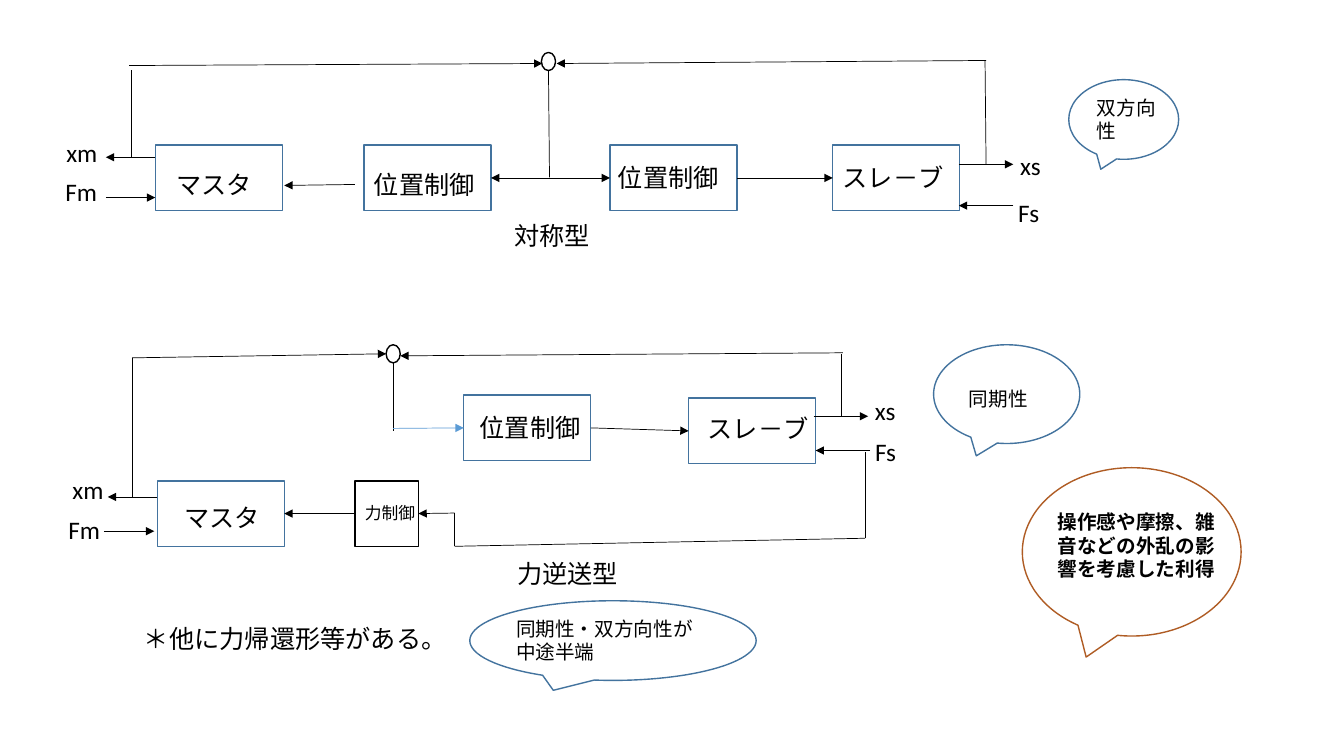
from lxml.etree import SubElement
from pptx import Presentation
from pptx.dml.color import RGBColor
from pptx.enum.shapes import MSO_CONNECTOR, MSO_SHAPE
from pptx.enum.text import MSO_AUTO_SIZE
from pptx.oxml.ns import qn
from pptx.util import Inches, Pt

THEME = {
    "font": "Calibri",
    "black": RGBColor(0x00, 0x00, 0x00),
    "white": RGBColor(0xFF, 0xFF, 0xFF),
    "blue": RGBColor(0x43, 0x73, 0x9E),
    "light blue": RGBColor(0x5B, 0x9B, 0xD5),
    "orange": RGBColor(0xAF, 0x5C, 0x24),
    "label": 18,
    "callout": 14,
    "small": 12,
    "outline": 1,
    "wire": 0.5,
}
TOP, LEFT, BOTTOM, RIGHT = range(4)
BOX_WIDTH, BOX_HEIGHT = 1.26, 0.65
NODE_WIDTH, NODE_HEIGHT = 0.14, 0.18
LINE_HEIGHT = {"label": 0.4, "callout": 0.34, "small": 0.3}

# name: left, top, width, outline colour
BLOCKS = {
    "symmetric master": (1.54, 1.44, BOX_WIDTH, "blue"),
    "master position control": (3.61, 1.44, BOX_WIDTH, "blue"),
    "slave position control": (6.05, 1.44, BOX_WIDTH, "blue"),
    "symmetric slave": (8.26, 1.44, BOX_WIDTH, "blue"),
    "reflecting master": (1.56, 4.77, BOX_WIDTH, "blue"),
    "force control": (3.52, 4.77, 0.63, "black"),
    "position control": (4.6, 3.92, BOX_WIDTH, "blue"),
    "reflecting slave": (6.83, 3.95, BOX_WIDTH, "blue"),
}

# left, top of each summing point
SUMMING_POINTS = [(5.37, 0.52), (3.83, 3.42)]

# text, left, top, width, size
LABELS = [
    ("マスタ", 1.65, 1.63, 0.99, "label"),
    ("位置制御", 3.61, 1.63, 1.26, "label"),
    ("位置制御", 6.03, 1.56, 1.26, "label"),
    ("スレ－ブ", 8.26, 1.56, 1.51, "label"),
    ("xm", 0.56, 1.31, 0.56, "label"),
    ("Fm", 0.55, 1.7, 0.76, "label"),
    ("xs", 10.02, 1.44, 0.53, "label"),
    ("Fs", 10, 1.91, 0.68, "label"),
    ("対称型", 5, 2.14, 3.32, "label"),
    ("マスタ", 1.73, 4.93, 0.99, "label"),
    ("力制御", 3.52, 4.94, 0.99, "small"),
    ("位置制御", 4.66, 4.04, 1.26, "label"),
    ("スレ－ブ", 6.92, 4.05, 1.51, "label"),
    ("xm", 0.62, 4.66, 0.56, "label"),
    ("Fm", 0.58, 5.05, 0.76, "label"),
    ("xs", 8.58, 3.87, 0.53, "label"),
    ("Fs", 8.58, 4.28, 0.68, "label"),
    ("力逆送型", 5.03, 5.49, 1.68, "label"),
    ("＊他に力帰還形等がある。", 1.33, 6.13, 6.54, "label"),
]

# Each end is a point or a (block, side) pair
PLAIN_WIRES = [
    ((1.3, 1.56), (1.3, 0.69)),
    ((9.77, 0.6), (9.78, 1.63)),
    ((5.44, 0.7), (5.45, 1.76)),
    ((4.51, 5.09), (4.51, 5.42)),
    ((4.51, 5.42), (8.58, 5.34)),
    ((8.58, 5.34), (8.58, 4.48)),
    ((3.9, 3.6), (3.9, 4.28)),
    ((8.34, 4.13), (8.34, 3.51)),
    ((1.31, 4.93), (1.31, 3.55)),
]
ARROWS = [
    (("slave position control", RIGHT), ("symmetric slave", LEFT)),
    ((3.52, 1.83), (2.82, 1.84)),
    ((1.54, 1.56), (1.05, 1.56)),
    ((1.05, 1.96), (1.54, 1.96)),
    ((9.51, 1.63), (10.05, 1.63)),
    ((10.05, 2.04), (9.51, 2.04)),
    ((1.28, 0.65), (5.38, 0.63)),
    ((9.78, 0.6), (5.52, 0.63)),
    (("position control", RIGHT), ("reflecting slave", LEFT)),
    ((8.07, 4.13), (8.61, 4.13)),
    ((8.63, 4.47), (8.09, 4.47)),
    ((1.56, 4.93), (1.07, 4.93)),
    ((1.03, 5.27), (1.53, 5.27)),
    ((4.51, 5.09), ("force control", RIGHT)),
    (("force control", LEFT), ("reflecting master", RIGHT)),
    ((8.36, 3.5), (3.97, 3.53)),
    ((1.31, 3.55), (3.83, 3.51)),
]
DOUBLE_ARROW = (("master position control", RIGHT), ("slave position control", LEFT))
BLUE_ARROW = ((3.9, 4.25), ("position control", LEFT))

# text, balloon frame, outline colour, text frame, bold
CALLOUTS = [
    ("操作感や摩擦、雑音などの外乱の影響を考慮した利得",
     (10.14, 4.64, 2.17, 1.67), "orange", (10.39, 5.01, 1.78, 0.81), True),
    ("双方向性", (10.6, 0.79, 1.09, 0.79), "blue", (10.78, 0.9, 0.82, 0.57), False),
    ("同期性", (9.26, 3.42, 1.45, 0.98), "blue", (9.51, 3.79, 1.12, 0.34), False),
    ("同期性・双方向性が中途半端",
     (4.66, 5.96, 2.84, 0.79), "blue", (5.02, 6.07, 2.12, 0.57), False),
]


def add_outline(slide, kind, frame, color, fill=None):
    shape = slide.shapes.add_shape(kind, *map(Inches, frame))
    shape.shadow.inherit = False
    if fill:
        shape.fill.solid()
        shape.fill.fore_color.rgb = THEME[fill]
    else:
        shape.fill.background()
    shape.line.color.rgb = THEME[color]
    shape.line.width = Pt(THEME["outline"])
    return shape


def add_text(slide, text, frame, size, bold=False):
    text_frame = slide.shapes.add_textbox(*map(Inches, frame)).text_frame
    text_frame.word_wrap = True
    text_frame.auto_size = MSO_AUTO_SIZE.SHAPE_TO_FIT_TEXT
    text_frame.text = text
    font = text_frame.paragraphs[0].runs[0].font
    font.name = THEME["font"]
    font.size = Pt(THEME[size])
    font.color.rgb = THEME["black"]
    font.bold = bold


def add_wire(slide, blocks, start, end, arrowheads=(), color="black"):
    """Draw a line between points, joining any end given as (block, side)."""
    start_joined, end_joined = (point[0] in blocks for point in (start, end))
    first = (0, 0) if start_joined else start
    last = (0, 0) if end_joined else end
    wire = slide.shapes.add_connector(
        MSO_CONNECTOR.STRAIGHT, *map(Inches, (*first, *last)))
    if start_joined:
        wire.begin_connect(blocks[start[0]], start[1])
    if end_joined:
        wire.end_connect(blocks[end[0]], end[1])
    wire.line.color.rgb = THEME[color]
    wire.line.width = Pt(THEME["wire"])
    properties = wire.element.spPr
    for arrowhead in arrowheads:
        SubElement(properties.find(qn("a:ln")), qn(arrowhead), type="triangle")
    SubElement(properties, qn("a:effectLst"))


def main():
    presentation = Presentation()
    presentation.slide_width = Inches(13.33)
    presentation.slide_height = Inches(7.5)
    slide = presentation.slides.add_slide(presentation.slide_layouts[6])

    blocks = {
        name: add_outline(slide, MSO_SHAPE.RECTANGLE, (left, top, width, BOX_HEIGHT), color)
        for name, (left, top, width, color) in BLOCKS.items()
    }
    for left, top in SUMMING_POINTS:
        add_outline(slide, MSO_SHAPE.OVAL, (left, top, NODE_WIDTH, NODE_HEIGHT),
                    "black", "white")
    for start, end in PLAIN_WIRES:
        add_wire(slide, blocks, start, end)
    for start, end in ARROWS:
        add_wire(slide, blocks, start, end, ["a:tailEnd"])
    add_wire(slide, blocks, *DOUBLE_ARROW, ["a:headEnd", "a:tailEnd"])
    add_wire(slide, blocks, *BLUE_ARROW, ["a:tailEnd"], "light blue")

    for text, left, top, width, size in LABELS:
        add_text(slide, text, (left, top, width, LINE_HEIGHT[size]), size)
    for text, balloon, color, frame, bold in CALLOUTS:
        add_outline(slide, MSO_SHAPE.OVAL_CALLOUT, balloon, color)
        add_text(slide, text, frame, "callout", bold)

    presentation.save("out.pptx")


if __name__ == "__main__":
    main()
